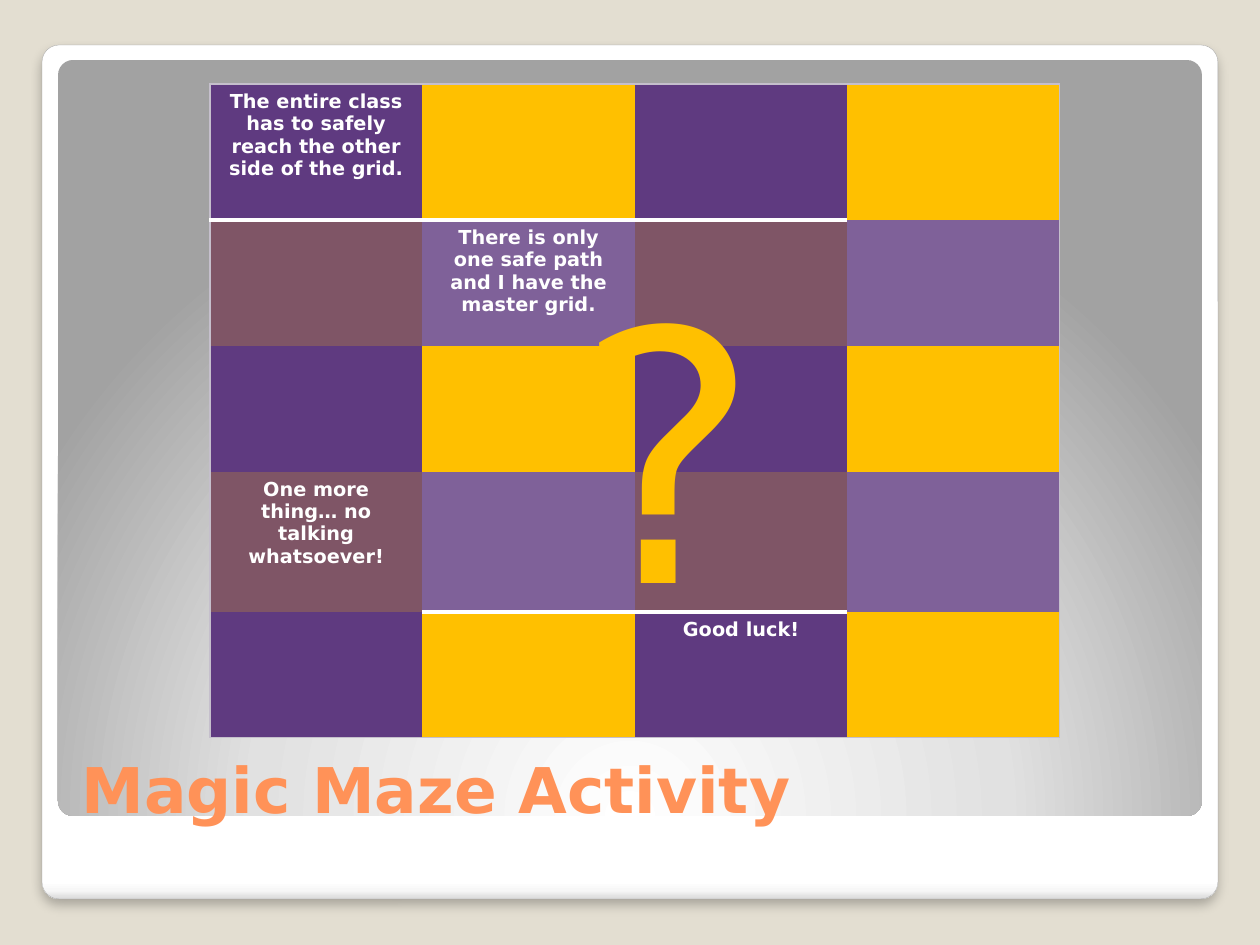
from lxml import etree
from pptx import Presentation
from pptx.dml.color import RGBColor
from pptx.enum.shapes import MSO_SHAPE as SHAPE
from pptx.enum.text import MSO_ANCHOR as ANCHOR, PP_ALIGN as ALIGN
from pptx.oxml import parse_xml
from pptx.oxml.ns import nsdecls, qn
from pptx.util import Pt

# Content
TITLE = "Magic Maze Activity"
MARK = "?"
NOTES = {
    (0, 0): "The entire class has to safely reach the other side of the grid.",
    (1, 1): "There is only one safe path and I have the master grid.",
    (3, 0): "One more thing… no talking whatsoever!",
    (4, 2): "Good luck!",
}

# Look
PX = 914400 // 126
FONT = "DejaVu Sans"
COLORS = {
    "backdrop": "E3DED1", "frame_line": "A4A4A4", "title": "FF9258",
    "purple": "5F3A80", "gold": "FFC000", "plum": "7F5566",
    "lilac": "7F6199", "white": "FFFFFF", "grid_edge": "C5BFCC",
}
ROW_COLORS = [("purple", "gold"), ("plum", "lilac")]
FRAME_STOPS = [(0, "FFFFFF"), (98, "FFFFFF"), (99, "F7F7F7"), (100, "DADADA")]
PANEL_STOPS = [(0, "FFFFFF"), (55, "E1E1E1"), (100, "A2A2A2")]
DOWNWARD = '<a:lin ang="5400000" scaled="0"/>'
FROM_BELOW = ('<a:path path="circle"><a:fillToRect l="50000" t="175000" '
              'r="50000" b="-75000"/></a:path>')

# Grid
ROW_HEIGHTS = [136, 126, 126, 140, 126]
COLUMNS, COLUMN_WIDTH = 4, 212.5
GRID_LEFT, GRID_TOP = 210, 84
WALLS = {1: range(0, 3), 4: range(1, 3)}  # row line: columns it spans


def px(*lengths):
    return [round(length * PX) for length in lengths]


def rgb(name):
    return RGBColor.from_string(COLORS[name])


def add_span(para, text, size, color, bold=False):
    span = para.add_run()
    span.text = text
    span.font.name, span.font.size, span.font.bold = FONT, Pt(size), bold
    span.font.color.rgb = rgb(color)


def add_text(page, area, text, size, color, bold=False,
             align=ALIGN.LEFT, anchor=ANCHOR.TOP):
    frame = page.shapes.add_textbox(*px(*area)).text_frame
    frame.word_wrap = True
    frame.vertical_anchor = anchor
    frame.paragraphs[0].alignment = align
    add_span(frame.paragraphs[0], text, size, color, bold)


def add_panel(page, area, stops, direction):
    panel = page.shapes.add_shape(SHAPE.ROUNDED_RECTANGLE, *px(*area))
    panel.adjustments[0] = 0.02
    panel.shadow.inherit = False
    panel.line.fill.background()
    panel.fill.solid()
    stop_xml = "".join(f'<a:gs pos="{at * 1000}"><a:srgbClr val="{color}"/></a:gs>'
                       for at, color in stops)
    properties = panel.fill._xPr
    properties.replace(properties.find(qn("a:solidFill")), parse_xml(
        f'<a:gradFill {nsdecls("a")} rotWithShape="1"><a:gsLst>{stop_xml}</a:gsLst>'
        f'{direction}</a:gradFill>'))
    return panel


def add_shadow(shape):
    effects = shape._element.spPr.find(qn("a:effectLst"))
    effects.append(parse_xml(
        f'<a:outerShdw {nsdecls("a")} blurRad="{Pt(6)}" dist="{Pt(4)}" dir="5400000" '
        'algn="t" rotWithShape="0"><a:srgbClr val="000000">'
        '<a:alpha val="25000"/></a:srgbClr></a:outerShdw>'))


def row_line(line, column):
    if column in WALLS.get(line, ()):
        return "white", 3
    return ("grid_edge", 0.75) if line in (0, len(ROW_HEIGHTS)) else None


def column_line(line):
    return ("grid_edge", 0.75) if line in (0, COLUMNS) else None


def set_border(cell, side, style):
    border = etree.SubElement(cell._tc.get_or_add_tcPr(), qn(f"a:ln{side}"))
    if style is None:
        border.set("w", "0")
        etree.SubElement(border, qn("a:noFill"))
        return
    color, width = style
    border.set("w", str(Pt(width)))
    fill = etree.SubElement(border, qn("a:solidFill"))
    etree.SubElement(fill, qn("a:srgbClr"), val=COLORS[color])


def add_grid(page):
    area = px(GRID_LEFT, GRID_TOP, COLUMNS * COLUMN_WIDTH, sum(ROW_HEIGHTS))
    table = page.shapes.add_table(len(ROW_HEIGHTS), COLUMNS, *area).table
    table.first_row = table.horz_banding = False
    for column in table.columns:
        column.width = px(COLUMN_WIDTH)[0]
    for r, height in enumerate(ROW_HEIGHTS):
        table.rows[r].height = px(height)[0]
        for c in range(COLUMNS):
            cell = table.cell(r, c)
            set_border(cell, "L", column_line(c))
            set_border(cell, "R", column_line(c + 1))
            set_border(cell, "T", row_line(r, c))
            set_border(cell, "B", row_line(r + 1, c))
            cell.fill.solid()
            cell.fill.fore_color.rgb = rgb(ROW_COLORS[r % 2][c % 2])
            if (r, c) in NOTES:
                para = cell.text_frame.paragraphs[0]
                para.alignment = ALIGN.CENTER
                add_span(para, NOTES[r, c], 11, "white", bold=True)


def main():
    deck = Presentation()
    deck.slide_width, deck.slide_height = px(1260, 945)
    page = deck.slides.add_slide(deck.slide_layouts[6])
    page.background.fill.solid()
    page.background.fill.fore_color.rgb = rgb("backdrop")

    # Framed backdrop
    frame = add_panel(page, (42, 45, 1176, 854), FRAME_STOPS, DOWNWARD)
    frame.line.color.rgb = rgb("frame_line")
    frame.line.width = Pt(0.16)
    add_shadow(frame)
    add_panel(page, (58, 60, 1144, 756), PANEL_STOPS, FROM_BELOW)

    # Title, maze grid and question mark
    add_text(page, (69, 687, 1128, 145), TITLE, 36, "title", bold=True,
             anchor=ANCHOR.BOTTOM)
    add_grid(page)
    add_text(page, (431, 227, 472, 540), MARK, 200, "gold", align=ALIGN.CENTER)
    deck.save("out.pptx")


if __name__ == "__main__":
    main()
